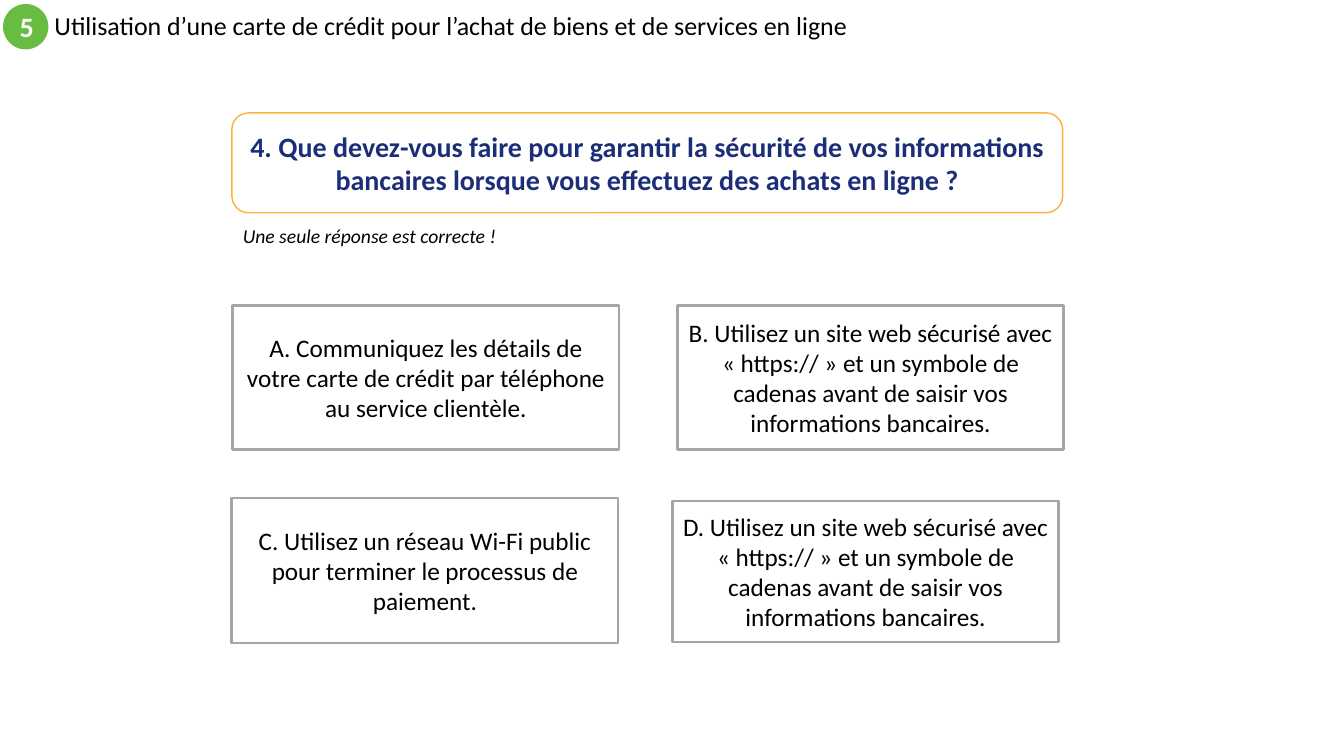
import pptx
import pptx.util
import pptx.dml.color
import pptx.enum.shapes
import pptx.enum.text
from dataclasses import dataclass

Inches = pptx.util.Inches
Shape = pptx.enum.shapes.MSO_SHAPE
Align = pptx.enum.text.PP_ALIGN
Anchor = pptx.enum.text.MSO_ANCHOR
Fit = pptx.enum.text.MSO_AUTO_SIZE


@dataclass(frozen=True)
class Theme:
    font: str = "Calibri"
    black: str = "000000"
    white: str = "FFFFFF"
    green: str = "68BC42"
    navy: str = "1C2E78"
    gold: str = "FCB13A"
    gray: str = "A5A5A5"
    head: float = 18.5
    large: float = 20
    body: float = 18
    note: float = 14


theme = Theme()


def write(shape, text, size, color, align=Align.CENTER, bold=False, italic=False):
    frame = shape.text_frame
    frame.text = text
    frame.word_wrap = True
    frame.auto_size = Fit.NONE
    frame.vertical_anchor = Anchor.MIDDLE
    for para in frame.paragraphs:
        para.alignment = align
        font = para.font
        font.name = theme.font
        font.size = pptx.util.Pt(size)
        font.bold = bold
        font.italic = italic
        font.color.rgb = pptx.dml.color.RGBColor.from_string(color)


def draw(kind, area, fill, line=None, width=1):
    shape = slide.shapes.add_shape(kind, *map(Inches, area))
    shape.shadow.inherit = False
    shape.fill.solid()
    shape.fill.fore_color.rgb = pptx.dml.color.RGBColor.from_string(fill)
    if line:
        shape.line.color.rgb = pptx.dml.color.RGBColor.from_string(line)
        shape.line.width = pptx.util.Pt(width)
    else:
        shape.line.fill.background()
    return shape


deck = pptx.Presentation()
deck.slide_width = Inches(13.33)
deck.slide_height = Inches(7.5)
slide = deck.slides.add_slide(deck.slide_layouts[5])

badge = draw(Shape.OVAL, (0.03, 0.04, 0.45, 0.45), theme.green)
write(badge, "5", theme.large, theme.white, bold=True)

title = slide.shapes.title
title.left, title.top = Inches(0.44), Inches(0.04)
title.width, title.height = Inches(8.58), Inches(0.45)
write(title, "Utilisation d’une carte de crédit pour l’achat de biens et de services en ligne",
      theme.head, theme.black, Align.LEFT)
title.text_frame.paragraphs[0].line_spacing = 0.9

query = draw(Shape.ROUNDED_RECTANGLE, (2.3, 1.12, 8.24, 0.99), theme.white, theme.gold)
write(query, "4. Que devez-vous faire pour garantir la sécurité de vos informations "
      "bancaires lorsque vous effectuez des achats en ligne ?",
      theme.large, theme.navy, bold=True)

hint = slide.shapes.add_textbox(Inches(2.31), Inches(2.17), Inches(2.8), Inches(0.34))
write(hint, "Une seule réponse est correcte !", theme.note, theme.black, Align.LEFT, italic=True)

choices = [
    (2.31, 3.03, 1.43, "A. Communiquez les détails de votre carte de crédit par téléphone "
     "au service clientèle."),
    (6.72, 3.03, 1.43, "B. Utilisez un site web sécurisé avec\n« https:// » et un symbole de "
     "cadenas avant de saisir vos informations bancaires."),
    (2.3, 4.94, 1.44, "C. Utilisez un réseau Wi-Fi public pour terminer le processus de "
     "paiement."),
    (6.67, 4.97, 1.4, "D. Utilisez un site web sécurisé avec « https:// » et un symbole de "
     "cadenas avant de saisir vos informations bancaires."),
]
for left, top, height, text in choices:
    box = draw(Shape.RECTANGLE, (left, top, 3.83, height), theme.white, theme.gray, 2)
    write(box, text, theme.body, theme.black)

deck.save("out.pptx")
